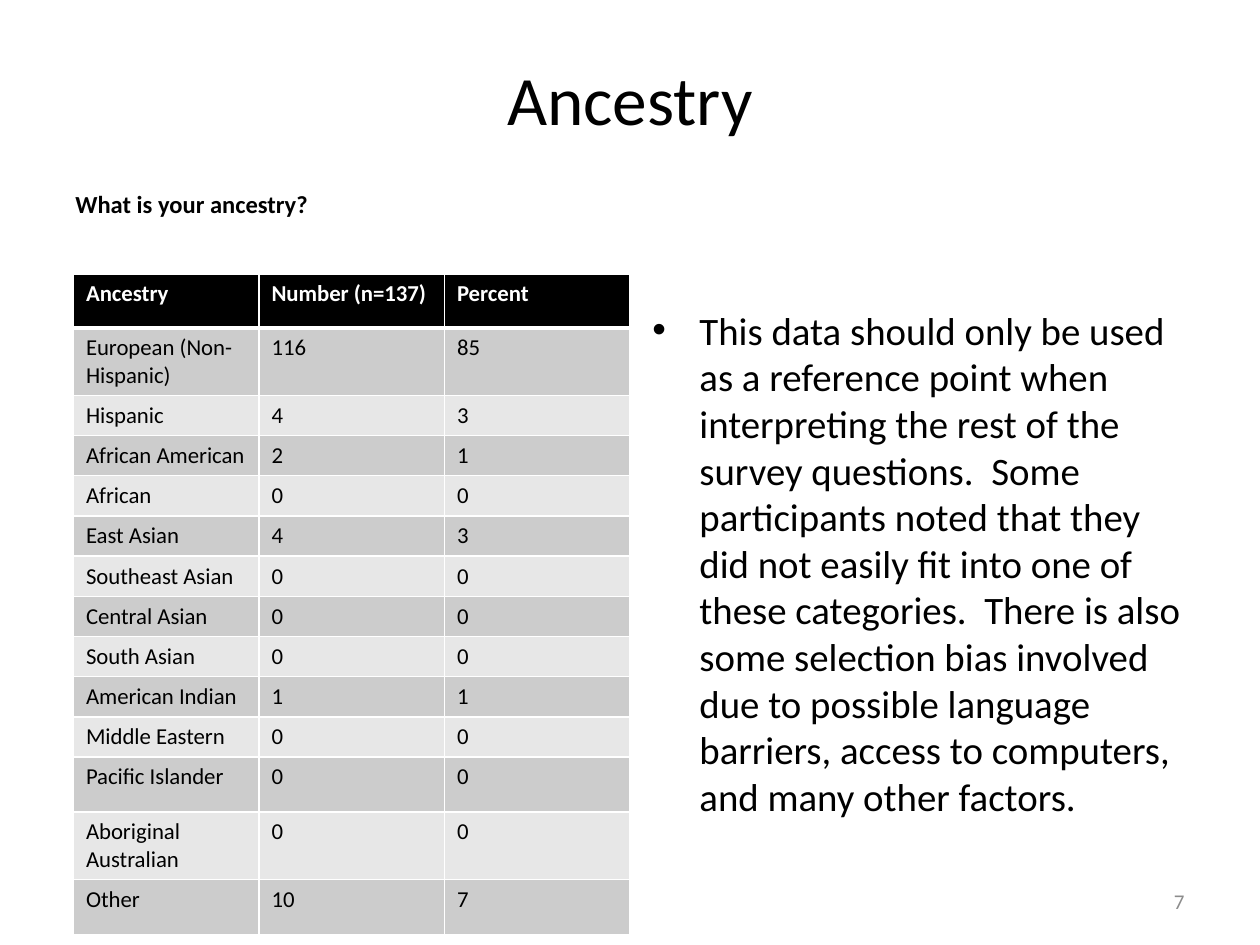
"""Build the Ancestry survey slide with its table and commentary."""
from dataclasses import dataclass

from lxml import etree
from pptx import Presentation
from pptx.dml.color import RGBColor
from pptx.enum import text
from pptx.oxml import ns
from pptx.util import Cm, Pt


@dataclass(frozen=True)
class Theme:
    """Colours, font and type sizes of the deck."""
    font: str = "Calibri"
    ink: str = "000000"
    paper: str = "FFFFFF"
    muted: str = "8C8C8C"
    bands: tuple[str, str] = ("CCCCCC", "E7E7E7")
    title: float = 39.6
    body: float = 22.2
    caption: float = 14
    cell: float = 13
    footer: float = 12


@dataclass(frozen=True)
class Frame:
    """Position and size in centimetres."""
    left: float
    top: float
    width: float
    height: float

    def lengths(self) -> tuple[Cm, Cm, Cm, Cm]:
        """Return the four lengths in slide units."""
        return Cm(self.left), Cm(self.top), Cm(self.width), Cm(self.height)


@dataclass(frozen=True)
class Group:
    """One answer row of the survey table."""
    ancestry: str
    number: int
    percent: int
    height: float = 0.81


THEME = Theme()
HEADINGS = ("Ancestry", "Number (n=137)", "Percent")
HEADER_HEIGHT = 1.09
TABLE_FRAME = Frame(1.48, 5.52, 11.22, 13.28)
GROUPS = (
    Group("European (Non-Hispanic)", 116, 85, 1.36),
    Group("Hispanic", 4, 3),
    Group("African American", 2, 1),
    Group("African", 0, 0),
    Group("East Asian", 4, 3),
    Group("Southeast Asian", 0, 0),
    Group("Central Asian", 0, 0),
    Group("South Asian", 0, 0),
    Group("American Indian", 1, 1),
    Group("Middle Eastern", 0, 0),
    Group("Pacific Islander", 0, 0, 1.11),
    Group("Aboriginal Australian", 0, 0, 1.36),
    Group("Other", 10, 7, 1.11),
)
COMMENT = (
    "This data should only be used as a reference point when interpreting the rest "
    "of the survey questions.  Some participants noted that they did not easily fit "
    "into one of these categories.  There is also some selection bias involved due to "
    "possible language barriers, access to computers, and many other factors."
)


def style_paragraph(para, size: float, colour: str, bold: bool = False) -> None:
    """Set the font of a whole paragraph."""
    para.font.name = THEME.font
    para.font.size = Pt(size)
    para.font.bold = bold
    para.font.color.rgb = RGBColor.from_string(colour)


def add_text(page, frame: Frame, words: str, size: float, colour: str = THEME.ink,
             bold: bool = False, anchor=text.MSO_ANCHOR.TOP,
             align=text.PP_ALIGN.LEFT):
    """Add a wrapped text box and return its paragraph."""
    box = page.shapes.add_textbox(*frame.lengths())
    box.text_frame.word_wrap = True
    box.text_frame.vertical_anchor = anchor
    para = box.text_frame.paragraphs[0]
    para.text = words
    para.alignment = align
    style_paragraph(para, size, colour, bold)
    return para


def add_bullet(para, indent: float) -> None:
    """Give a paragraph a hanging round bullet."""
    properties = para._p.get_or_add_pPr()
    properties.set("marL", str(Cm(indent)))
    properties.set("indent", str(-Cm(indent)))
    etree.SubElement(properties, ns.qn("a:buFont")).set("typeface", "Arial")
    etree.SubElement(properties, ns.qn("a:buChar")).set("char", "•")


def add_borders(cell, bottom: float) -> None:
    """Draw the paper-coloured rules around a cell."""
    properties = cell._tc.get_or_add_tcPr()
    for side, width in (("L", 1), ("R", 1), ("T", 1), ("B", bottom)):
        line = etree.SubElement(properties, ns.qn(f"a:ln{side}"), w=str(Pt(width)))
        fill = etree.SubElement(line, ns.qn("a:solidFill"))
        etree.SubElement(fill, ns.qn("a:srgbClr"), val=THEME.paper)


def fill_row(table, index: int, values: tuple, height: float) -> None:
    """Write and format one table row; the first one is the header."""
    header = index == 0
    fill = THEME.ink if header else THEME.bands[(index - 1) % 2]
    table.rows[index].height = Cm(height)
    for column, value in enumerate(values):
        cell = table.cell(index, column)
        cell.text = str(value)
        style_paragraph(cell.text_frame.paragraphs[0], THEME.cell,
                        THEME.paper if header else THEME.ink, header)
        add_borders(cell, 3 if header else 1)
        cell.fill.solid()
        cell.fill.fore_color.rgb = RGBColor.from_string(fill)


def add_survey_table(page) -> None:
    """Add the ancestry table with equal columns."""
    table = page.shapes.add_table(len(GROUPS) + 1, len(HEADINGS),
                                  *TABLE_FRAME.lengths()).table
    for column in table.columns:
        column.width = Cm(TABLE_FRAME.width / len(HEADINGS))
    fill_row(table, 0, HEADINGS, HEADER_HEIGHT)
    for index, group in enumerate(GROUPS, 1):
        fill_row(table, index, (group.ancestry, group.number, group.percent),
                 group.height)


def set_title(page, words: str, frame: Frame) -> None:
    """Place and format the title placeholder."""
    title = page.shapes.title
    title.left, title.top, title.width, title.height = frame.lengths()
    title.text_frame.vertical_anchor = text.MSO_ANCHOR.MIDDLE
    para = title.text_frame.paragraphs[0]
    para.text = words
    para.alignment = text.PP_ALIGN.CENTER
    style_paragraph(para, THEME.title, THEME.ink)


def main() -> None:
    """Build and save the deck."""
    deck = Presentation()
    deck.slide_width, deck.slide_height = Cm(25.4), Cm(19.05)
    page = deck.slides.add_slide(deck.slide_layouts[5])
    set_title(page, "Ancestry", Frame(1.27, 0.76, 22.86, 2.41))
    add_text(page, Frame(1.27, 3.6, 11.22, 1), "What is your ancestry?",
             THEME.caption, bold=True, anchor=text.MSO_ANCHOR.MIDDLE)
    add_survey_table(page)
    comment = add_text(page, Frame(12.9, 6.05, 11.23, 10.97), COMMENT, THEME.body)
    add_bullet(comment, 0.95)
    add_text(page, Frame(18.2, 17.66, 5.93, 1.01), "7", THEME.footer, THEME.muted,
             anchor=text.MSO_ANCHOR.MIDDLE, align=text.PP_ALIGN.RIGHT)
    deck.save("out.pptx")


if __name__ == "__main__":
    main()
